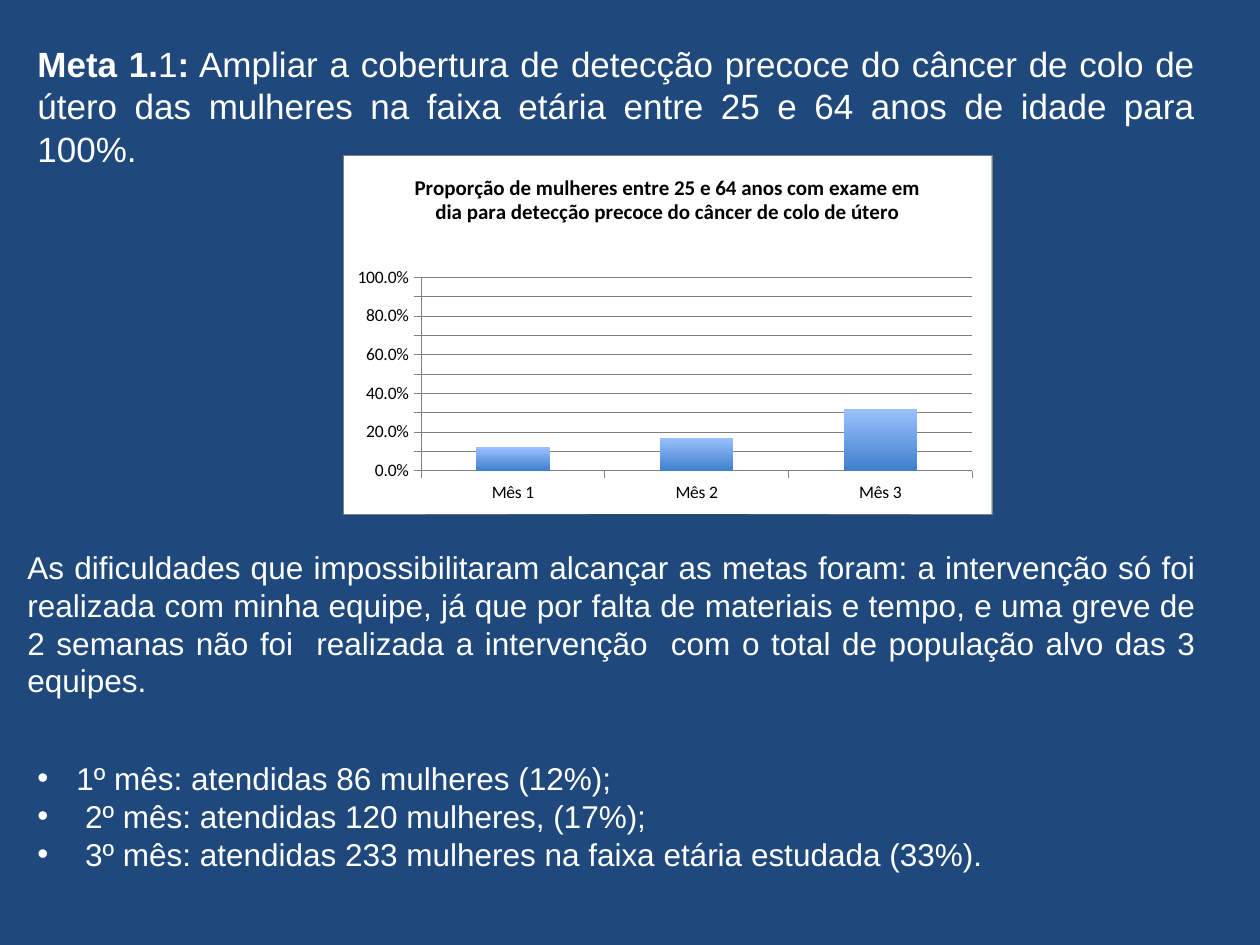
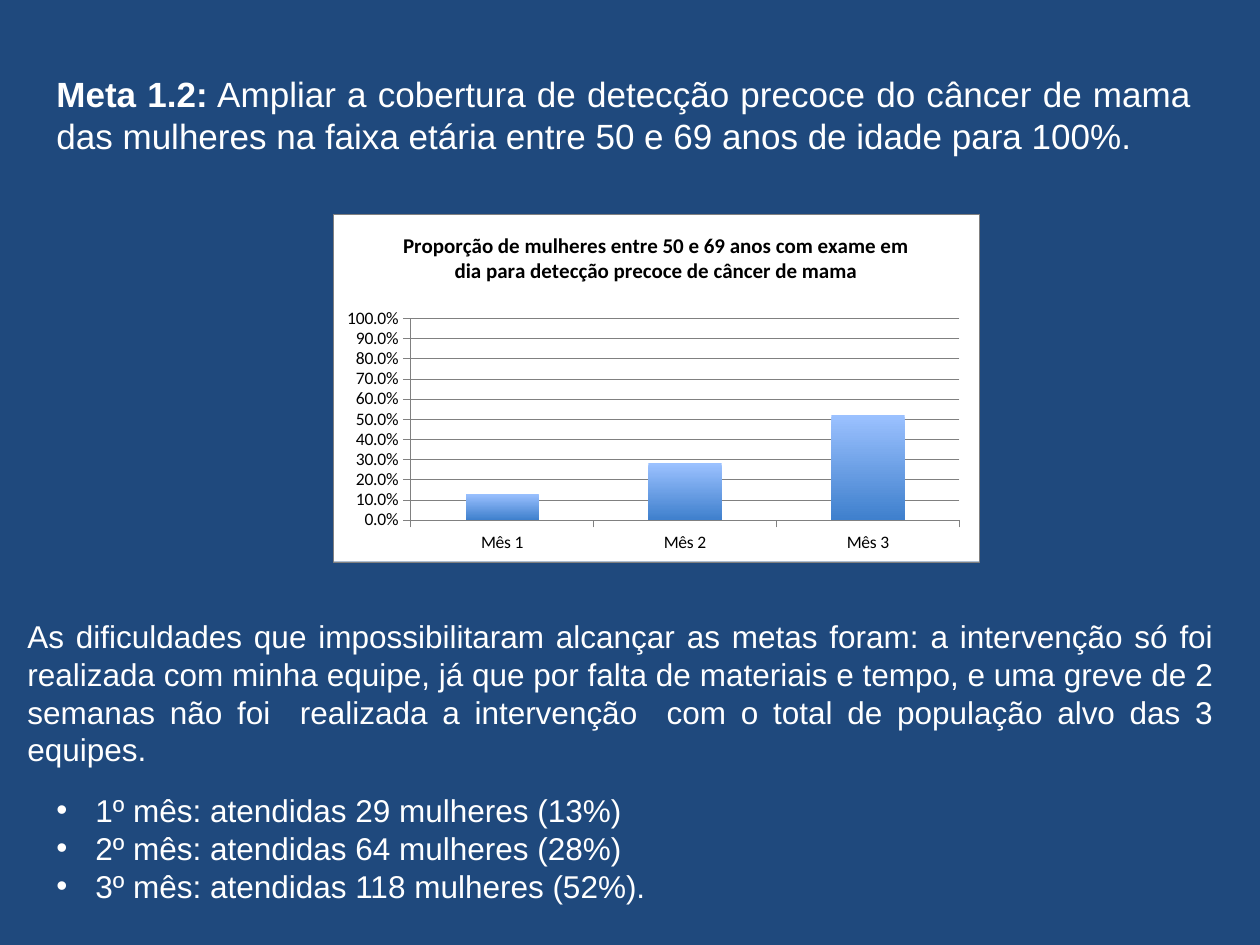
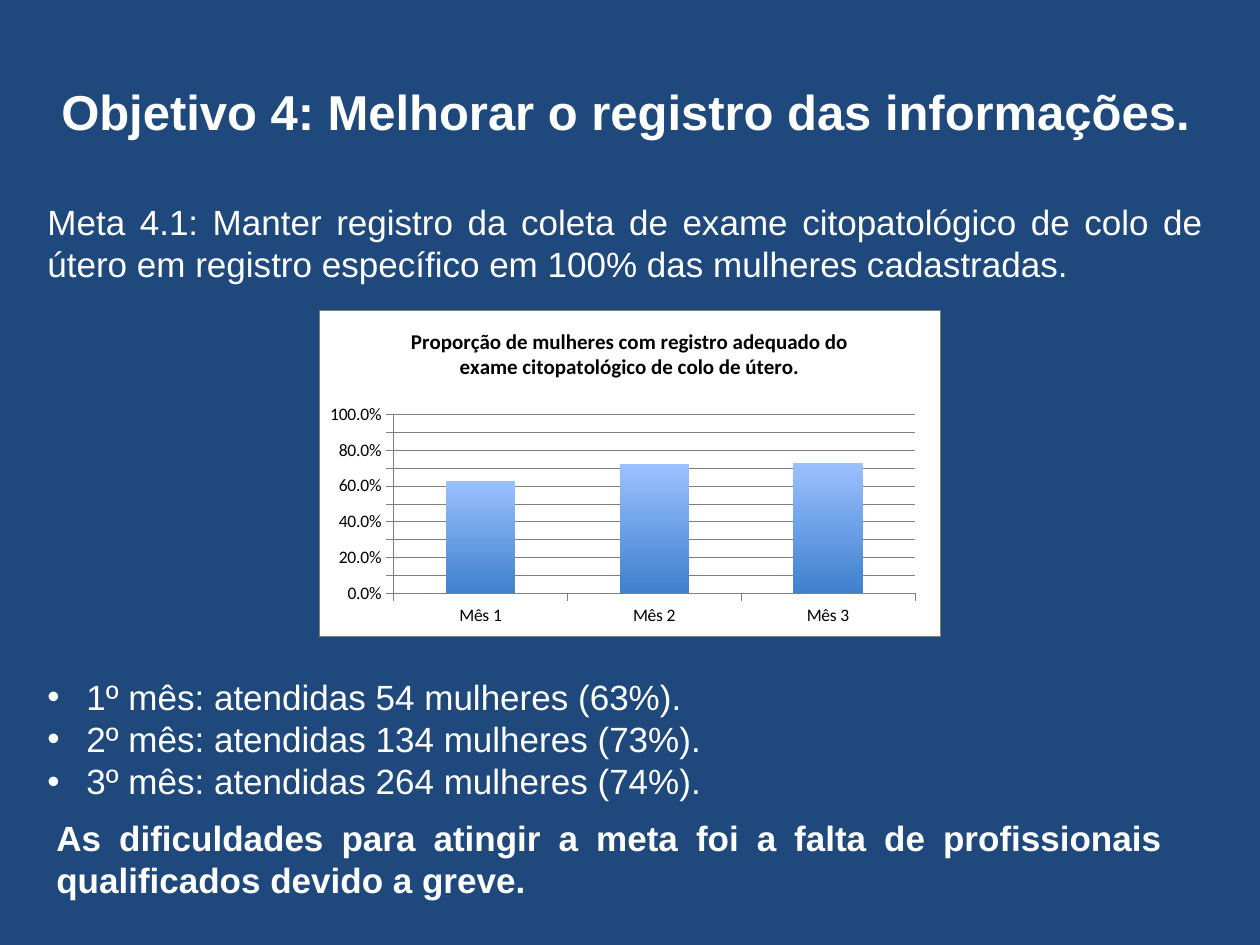
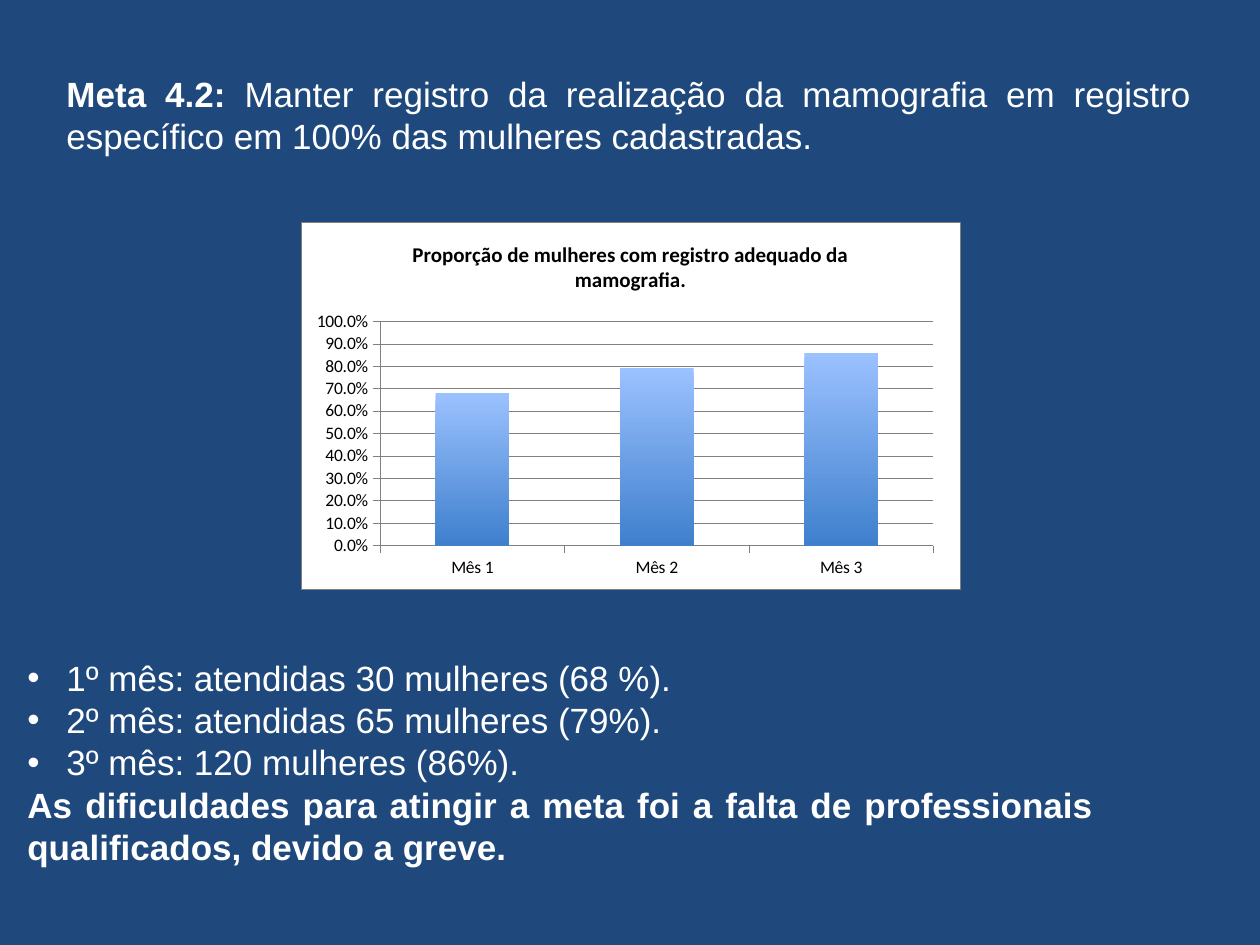
"""Build four slides on screening goals, each with a monthly coverage chart."""
from collections import namedtuple
from dataclasses import dataclass

from lxml import etree
from pptx import Presentation
from pptx import util as u
from pptx.chart import data as chart_data
from pptx.dml.color import RGBColor
from pptx.enum import chart as charts, text
from pptx.oxml import parse_xml
from pptx.oxml.ns import nsdecls, qn

PX = 914400 / 126
Box = namedtuple("Box", "left top width height")
JUSTIFY = text.PP_ALIGN.JUSTIFY
CENTER = text.PP_ALIGN.CENTER


@dataclass(frozen=True)
class Theme:
    background: str = "1F497D"
    ink: str = "FFFFFF"
    chart_ink: str = "000000"
    chart_paper: str = "FFFFFF"
    rule: str = "808080"
    bar_top: str = "9BC1FF"
    bar_bottom: str = "3F80CD"
    text_font: str = "Arial"
    chart_font: str = "Calibri"
    heading: int = 28
    body: int = 20
    note: int = 18
    chart_title: int = 12
    chart_label: int = 10
    rule_width: float = 0.25
    leading: float = 1.2
    bullet_indent: int = 39


THEME = Theme()
MONTHS = ["Mês 1", "Mês 2", "Mês 3"]
DIFFICULTIES = (
    "As dificuldades que impossibilitaram alcançar as metas foram: a intervenção só foi "
    "realizada com minha equipe, já que por falta de materiais e tempo, e uma greve de 2 "
    "semanas não foi  realizada a intervenção  com o total de população alvo das 3 equipes."
)


def emu(pixels):
    return u.Emu(round(pixels * PX))


def rgb(value):
    return RGBColor.from_string(value)


def apply(target, values):
    for name, value in values.items():
        setattr(target, name, value)


def style_font(font, family, size, color, bold=False):
    apply(font, {"name": family, "size": u.Pt(size), "bold": bold})
    font.color.rgb = rgb(color)


def style_line(line):
    line.color.rgb = rgb(THEME.rule)
    line.width = u.Pt(THEME.rule_width)


def add_page(deck):
    page = deck.slides.add_slide(deck.slide_layouts[6])
    page.background.fill.solid()
    page.background.fill.fore_color.rgb = rgb(THEME.background)
    return page


def add_frame(page, box, top_margin=6):
    frame = page.shapes.add_textbox(*map(emu, box)).text_frame
    apply(frame, {
        "word_wrap": True,
        "auto_size": text.MSO_AUTO_SIZE.SHAPE_TO_FIT_TEXT,
        "margin_top": emu(top_margin),
    })
    return frame


def add_para(frame, spans, size, align=JUSTIFY, after=0):
    """Write (text, bold) spans as one paragraph, using the frame's empty one first."""
    first = frame.paragraphs[0]
    para = frame.add_paragraph() if first.runs else first
    apply(para, {
        "alignment": align,
        "line_spacing": u.Pt(size * THEME.leading),
        "space_after": u.Pt(after),
    })
    for words, bold in spans:
        span = para.add_run()
        span.text = words
        style_font(span.font, THEME.text_font, size, THEME.ink, bold)
    return para


def add_bullets(frame, items, size):
    indent = emu(THEME.bullet_indent)
    for item in items:
        props = add_para(frame, [(item, False)], size)._p.get_or_add_pPr()
        props.set("marL", str(indent))
        props.set("indent", str(-indent))
        etree.SubElement(props, qn("a:buFont")).set("typeface", THEME.text_font)
        etree.SubElement(props, qn("a:buChar")).set("char", "•")


def add_goal(page, box, label, goal):
    add_para(add_frame(page, box), [(label, True), (goal, False)], THEME.body)


def paper_xml(border):
    """Return the fill and outline of a chart area or plot area."""
    outline = f'<a:solidFill><a:srgbClr val="{THEME.rule}"/></a:solidFill>' if border else "<a:noFill/>"
    return parse_xml(
        f'<c:spPr {nsdecls("c", "a")}>'
        f'<a:solidFill><a:srgbClr val="{THEME.chart_paper}"/></a:solidFill>'
        f'<a:ln w="{u.Pt(THEME.rule_width)}">{outline}</a:ln></c:spPr>'
    )


def place_plot(chart, plot):
    """Fix the inner plot area, given as fractions of the chart, and paint the paper."""
    root = chart.element
    area = root.xpath("c:chart/c:plotArea")[0]
    for layout in area.findall(qn("c:layout")):
        area.remove(layout)
    sizes = "".join(f'<c:{name} val="{value}"/>' for name, value in zip("xywh", plot))
    area.insert(0, parse_xml(
        f'<c:layout {nsdecls("c")}><c:manualLayout><c:layoutTarget val="inner"/>'
        f'<c:xMode val="edge"/><c:yMode val="edge"/>{sizes}</c:manualLayout></c:layout>'
    ))
    area.append(paper_xml(border=False))
    root.find(qn("c:chart")).addnext(paper_xml(border=True))


def add_coverage_chart(page, box, title, values, plot):
    data = chart_data.CategoryChartData(number_format="0.0%")
    data.categories = MONTHS
    data.add_series(title, values)
    kind = charts.XL_CHART_TYPE.COLUMN_CLUSTERED
    chart = page.shapes.add_chart(kind, *map(emu, box), data).chart
    style_font(chart.font, THEME.chart_font, THEME.chart_label, THEME.chart_ink)
    chart.has_legend = False
    chart.has_title = True
    chart.chart_title.include_in_layout = False
    para = chart.chart_title.text_frame.paragraphs[0]
    span = para.add_run()
    span.text = title
    style_font(span.font, THEME.chart_font, THEME.chart_title, THEME.chart_ink, True)

    for axis in (chart.category_axis, chart.value_axis):
        axis.major_tick_mark = charts.XL_TICK_MARK.OUTSIDE
        axis.minor_tick_mark = charts.XL_TICK_MARK.NONE
        style_font(axis.tick_labels.font, THEME.chart_font, THEME.chart_label, THEME.chart_ink)
        style_line(axis.format.line)
    scale = chart.value_axis
    apply(scale, {"minimum_scale": 0, "maximum_scale": 1, "major_unit": 0.1,
                  "has_major_gridlines": True})
    apply(scale.tick_labels, {"number_format": "0.0%", "number_format_is_linked": False})
    style_line(scale.major_gridlines.format.line)

    bars = chart.plots[0]
    apply(bars, {"gap_width": 150, "vary_by_categories": False})
    fill = bars.series[0].format.fill
    fill.gradient()
    fill.gradient_angle = 270
    for stop, color, position in zip(
        fill.gradient_stops, (THEME.bar_top, THEME.bar_bottom), (0, 1)
    ):
        stop.color.rgb = rgb(color)
        stop.position = position
    place_plot(chart, plot)


def add_cervical_coverage(deck):
    page = add_page(deck)
    frame = add_frame(page, Box(25, 37, 1183, 140))
    add_para(frame, [
        ("Meta 1.", True), ("1", False), (":", True),
        (" Ampliar a cobertura de detecção precoce do câncer de colo de útero das "
         "mulheres na faixa etária entre 25 e 64 anos de idade para 100%.", False),
    ], THEME.body)
    add_bullets(add_frame(page, Box(25, 631, 1183, 255), 128), [
        "1º mês: atendidas 86 mulheres (12%);",
        " 2º mês: atendidas 120 mulheres, (17%);",
        " 3º mês: atendidas 233 mulheres na faixa etária estudada (33%).",
    ], THEME.note)
    add_para(add_frame(page, Box(15, 542, 1193, 165)), [(DIFFICULTIES, False)], THEME.note)
    add_coverage_chart(
        page, Box(343, 155, 649, 359),
        "Proporção de mulheres entre 25 e 64 anos com exame em dia para detecção "
        "precoce do câncer de colo de útero",
        [0.12, 0.17, 0.32], (0.12, 0.34, 0.85, 0.54),
    )


def add_breast_coverage(deck):
    page = add_page(deck)
    add_goal(
        page, Box(44, 66, 1160, 97), "Meta 1.2:",
        " Ampliar a cobertura de detecção precoce do câncer de mama das mulheres na "
        "faixa etária entre 50 e 69 anos de idade para 100%.",
    )
    add_bullets(add_frame(page, Box(44, 701, 1011, 244), 90), [
        "1º mês: atendidas 29 mulheres (13%)",
        "2º mês: atendidas 64 mulheres (28%)",
        "3º mês: atendidas 118 mulheres (52%).",
    ], THEME.note)
    add_para(add_frame(page, Box(15, 611, 1211, 165)), [(DIFFICULTIES, False)], THEME.note)
    add_coverage_chart(
        page, Box(333, 214, 646, 348),
        "Proporção de mulheres entre 50 e 69 anos com exame em dia para detecção "
        "precoce de câncer de mama",
        [0.13, 0.28, 0.52], (0.12, 0.3, 0.85, 0.58),
    )


def add_cervical_records(deck):
    page = add_page(deck)
    frame = add_frame(page, Box(35, 76, 1181, 258))
    add_para(frame, [("Objetivo 4: Melhorar o registro das informações.", True)],
             THEME.heading, CENTER, after=34)
    add_para(frame, [(
        "Meta 4.1: Manter registro da coleta de exame citopatológico de colo de útero "
        "em registro específico em 100% das mulheres cadastradas.", False)], THEME.body)
    add_bullets(add_frame(page, Box(35, 670, 1142, 140)), [
        "1º mês: atendidas 54 mulheres (63%).",
        "2º mês: atendidas 134 mulheres (73%).",
        "3º mês: atendidas 264 mulheres (74%).",
    ], THEME.body)
    add_para(add_frame(page, Box(44, 810, 1131, 97)), [(
        "As dificuldades para atingir a meta foi a falta de profissionais qualificados "
        "devido a greve.", True)], THEME.body)
    add_coverage_chart(
        page, Box(319, 310, 621, 326),
        "Proporção de mulheres com registro adequado do exame citopatológico de colo "
        "de útero.",
        [0.63, 0.72, 0.73], (0.12, 0.32, 0.84, 0.55),
    )


def add_mammogram_records(deck):
    page = add_page(deck)
    add_goal(
        page, Box(54, 66, 1150, 158), "Meta 4.2:",
        " Manter registro da realização da mamografia em registro específico em 100% "
        "das mulheres cadastradas.",
    )
    frame = add_frame(page, Box(15, 651, 1091, 263))
    add_bullets(frame, [
        "1º mês: atendidas 30 mulheres (68 %).",
        "2º mês: atendidas 65 mulheres (79%).",
        "3º mês: 120 mulheres (86%).",
    ], THEME.body)
    add_para(frame, [(
        "As dificuldades para atingir a meta foi a falta de professionais qualificados, "
        "devido a greve.", True)], THEME.body)
    add_coverage_chart(
        page, Box(301, 222, 659, 368),
        "Proporção de mulheres com registro adequado da mamografia.",
        [0.68, 0.79, 0.86], (0.12, 0.27, 0.84, 0.61),
    )


def main():
    deck = Presentation()
    deck.slide_width, deck.slide_height = emu(1260), emu(945)
    add_cervical_coverage(deck)
    add_breast_coverage(deck)
    add_cervical_records(deck)
    add_mammogram_records(deck)
    deck.save("out.pptx")


if __name__ == "__main__":
    main()
